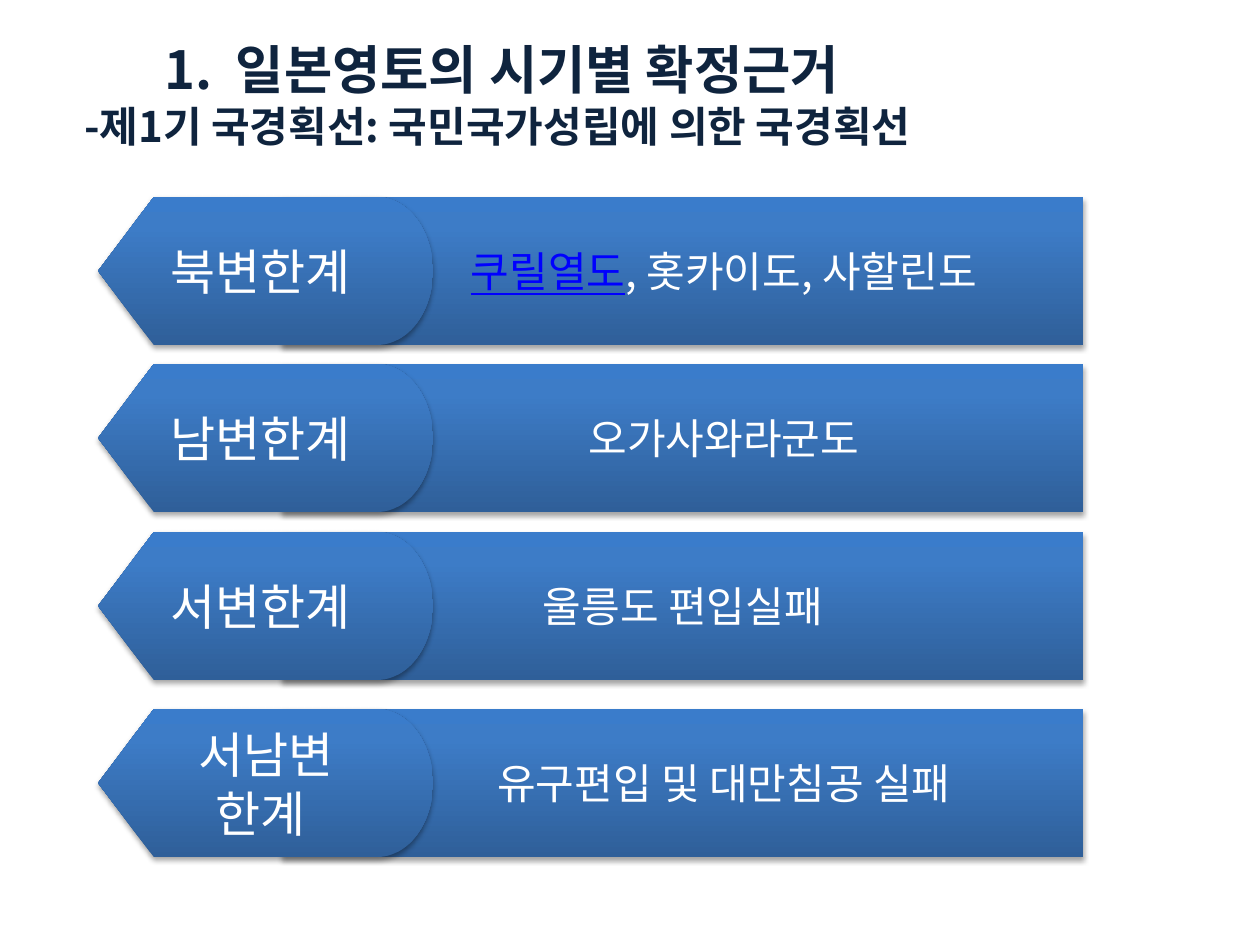
from lxml.etree import SubElement
from pptx import Presentation
from pptx.dml.color import RGBColor
from pptx.enum.shapes import MSO_SHAPE
from pptx.enum.text import MSO_ANCHOR, MSO_AUTO_SIZE, PP_ALIGN
from pptx.oxml.ns import qn
from pptx.util import Emu, Pt


def px(n):
    return Emu(round(n * 914400 / 126))


def color(code):
    return RGBColor.from_string(code)


class Deck:
    face = "Noto Sans CJK KR"
    navy, white, blue = "0F243E", "FFFFFF", "0000FF"
    stops = ((0, "2F5F99"), (80, "3D7CC7"), (100, "3A7CCB"))

    def __init__(self, wide, high):
        self.show = Presentation()
        self.show.slide_width, self.show.slide_height = px(wide), px(high)
        self.slide = self.show.slides.add_slide(self.show.slide_layouts[5])

    def style(self, run, size, code, bold=False):
        font = run.font
        font.name, font.size, font.bold = self.face, Pt(size), bold
        font.color.rgb = color(code)
        SubElement(run._r.get_or_add_rPr(), qn("a:ea"), typeface=self.face)

    def title(self, box, lines, sizes):
        shape = self.slide.shapes.title
        shape.left, shape.top, shape.width, shape.height = map(px, box)
        frame = shape.text_frame
        frame.text = "\n".join(lines)
        frame.word_wrap = True
        frame.auto_size = MSO_AUTO_SIZE.NONE
        frame.vertical_anchor = MSO_ANCHOR.MIDDLE
        for para, size in zip(frame.paragraphs, sizes):
            para.alignment = PP_ALIGN.CENTER
            props = para._p.get_or_add_pPr()
            props.set("marL", str(px(71)))
            props.set("indent", str(px(-71)))
            self.style(para.runs[0], size, self.navy, True)
        first = frame.paragraphs[0]._p.get_or_add_pPr()
        SubElement(first, qn("a:buFont"), typeface="+mj-lt")
        SubElement(first, qn("a:buAutoNum"), type="arabicPeriod")

    def paint(self, shape):
        shape.fill.gradient()
        shape.fill.gradient_angle = 90
        ramp = shape._element.spPr.find(qn("a:gradFill")).find(qn("a:gsLst"))
        ramp.clear()
        for place, code in self.stops:
            stop = SubElement(ramp, qn("a:gs"), pos=str(place * 1000))
            SubElement(stop, qn("a:srgbClr"), val=code)
        shape.line.fill.background()
        shape.shadow.inherit = False
        glow = SubElement(
            shape._element.spPr.find(qn("a:effectLst")), qn("a:outerShdw"),
            blurRad=str(Pt(3.1)), dist=str(Pt(1.8)), dir="5400000", rotWithShape="0")
        tint = SubElement(glow, qn("a:srgbClr"), val="000000")
        SubElement(tint, qn("a:alpha"), val="35000")

    def block(self, group, kind, box, text, size, inset=13, link=""):
        shape = group.shapes.add_shape(kind, *map(px, box))
        self.paint(shape)
        frame = shape.text_frame
        frame.word_wrap = True
        frame.vertical_anchor = MSO_ANCHOR.MIDDLE
        frame.margin_left = px(inset)
        frame.text = link or text
        if link:
            frame.paragraphs[0].add_run().text = text
        for para in frame.paragraphs:
            para.alignment = PP_ALIGN.CENTER
            for run in para.runs:
                self.style(run, size, self.white)
        if link:
            first = frame.paragraphs[0].runs[0].font
            first.color.rgb = color(self.blue)
            first.underline = True

    def row(self, top, label, text, inset, link):
        group = self.slide.shapes.add_group_shape()
        self.block(group, MSO_SHAPE.RECTANGLE, (282, top, 801, 148),
                   text, 24, inset, link)
        self.block(group, MSO_SHAPE.FLOWCHART_DISPLAY, (98, top, 335, 148),
                   label, 28)


def main():
    deck = Deck(1260, 945)
    deck.title((0, 20, 1004, 148),
               ("일본영토의 시기별 확정근거",
                "-제1기 국경획선: 국민국가성립에 의한 국경획선 "), (30, 24))
    rows = (
        (197, "북변한계 ", ", 홋카이도, 사할린도", 95, "쿠릴열도"),
        (364, "남변한계 ", "오가사와라군도", 95, ""),
        (532, "서변한계 ", "울릉도 편입실패", 13, ""),
        (709, "서남변\n한계 ", "유구편입 및 대만침공 실패", 95, ""),
    )
    for row in rows:
        deck.row(*row)
    deck.show.save("out.pptx")


if __name__ == "__main__":
    main()
